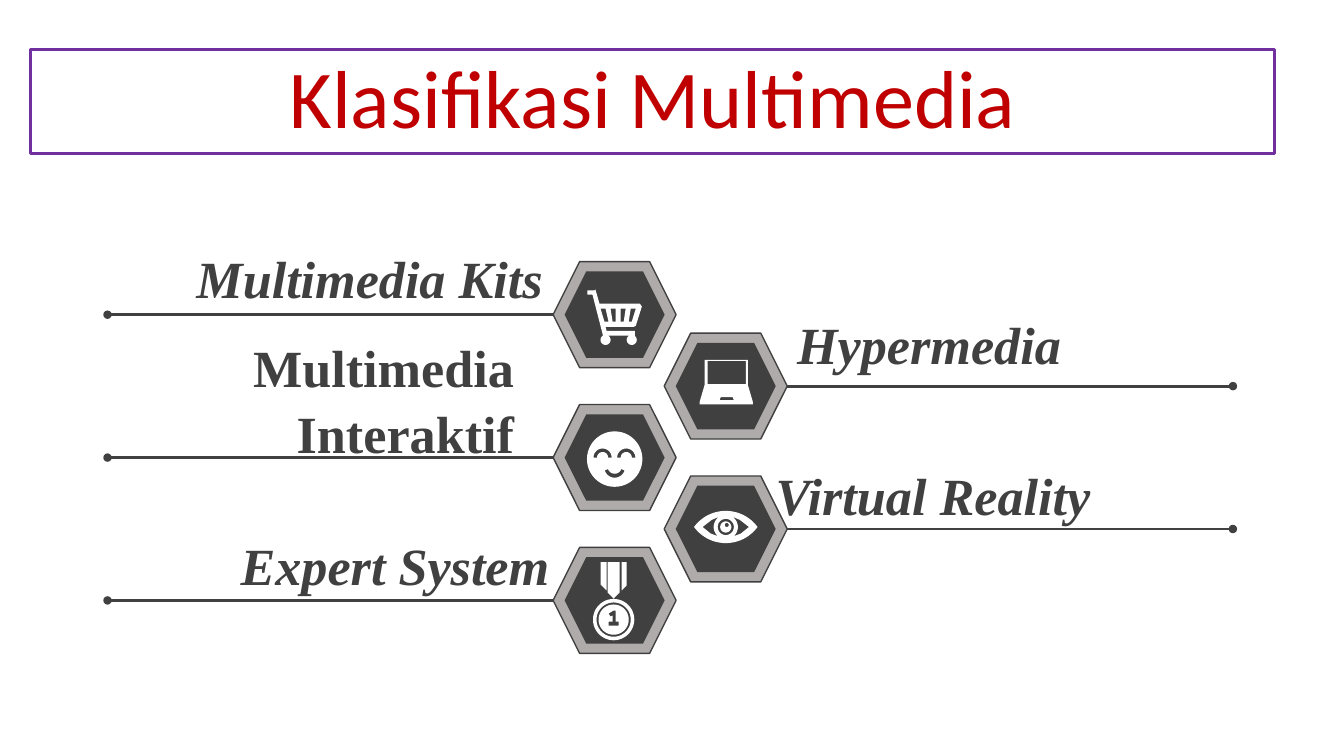
from math import cos, radians, sin

from lxml.etree import SubElement
from pptx import Presentation
from pptx.dml.color import RGBColor
from pptx.enum.shapes import MSO_CONNECTOR, MSO_SHAPE
from pptx.enum.text import MSO_ANCHOR, PP_ALIGN
from pptx.oxml.ns import qn
from pptx.util import Cm, Pt


def arc(cx, cy, rx, ry, start, end, steps=24):
    """Points along an ellipse; angles in degrees, clockwise from the right."""
    angles = [radians(start + (end - start) * i / steps) for i in range(steps + 1)]
    return [(cx + rx * cos(a), cy + ry * sin(a)) for a in angles]


def circle(cx, cy, r):
    return arc(cx, cy, r, r, 0, 360, 48)[:-1]


def mirror(points):
    return [(-x, y) for x, y in points]


def smiling_eye(cx):
    return arc(cx, 0, 9, 9, 180, 360) + arc(cx, 0, 5.5, 5.5, 360, 180)


COLORS = {"title": "C00000", "frame": "7030A0", "dark": "404040",
          "rim": "AFABAB", "icon": "FFFFFF"}
TITLE = "Klasifikasi Multimedia"

# Icon contours, measured from the centre of the hexagon in ICON_UNIT
ICON_UNIT = Cm(0.0254)
CART = [
    [(16, -6), (14, 7), (17, 7), (21, -6)],
    [(6, -6), (6, 7), (9, 7), (11, -6)],
    [(-4, -6), (-2, 7), (1, 7), (1, -6)],
    [(-14, -6), (-10, 7), (-6, 7), (-9, -6)],
    [(-19, -25), (-15, -11), (25, -11), (27, -8), (21, 11), (19, 12), (-9, 12),
     (-8, 16), (20, 16), (20, 21)] + arc(17, 25, 5, 5, -60, 240)
    + arc(-9, 25, 5, 5, -60, 240) + [(-22, -20), (-27, -20), (-27, -24), (-20, -24)],
]
LAPTOP = [
    [(-5, 11), (-6, 14), (8, 14), (7, 11)],
    [(-18, -25), (-18, -2), (20, -2), (20, -25)],
    [(-21, -26), (22, -26), (22, -1), (27, 16), (27, 18),
     (-26, 18), (-26, 16), (-21, -1)],
]
SMILE = [
    arc(0, 9, 10.5, 11, 20, 160) + arc(0, 9, 7, 7, 160, 20),
    smiling_eye(-12), smiling_eye(11.5), circle(0, 1.5, 27.5),
]
EYE_CORNER = arc(0, -2, 12, 12, -70, 50) + [(15, 4.5), (23, -2), (14, -9)]
EYE = [
    circle(1, -4, 2), circle(0, -2, 5.5), circle(0, -2, 8),
    EYE_CORNER, mirror(EYE_CORNER),
    arc(0, 21, 39, 39, -144, -36) + arc(0, -25, 39, 39, 36, 144),
]
MEDAL = [
    [(1, 10), (-1, 10), (-6, 13), (-4, 16), (-2, 15), (-2, 21),
     (-6, 21), (-6, 25), (4, 25), (4, 21), (1, 21)],
    circle(-1, 19, 15), circle(-1, 19, 17), circle(-1, 19, 20.5),
    [(7, -38), (12, -38), (12, -15), (7, -10)],
    [(-7, -38), (5, -38), (5, -8), (-1, -2), (-7, -8)],
    [(-14, -38), (-8, -38), (-8, -10), (-14, -16)],
]

# Top to bottom: label, italic, label left, label top, label height (cm), icon
ITEMS = [
    ("Multimedia Kits", True, 4.34, 5.99, 1.85, CART),
    ("Hypermedia", True, 19.84, 7.65, 1.85, LAPTOP),
    ("Multimedia Interaktif", False, 3.61, 8.23, 3.45, SMILE),
    ("Virtual Reality", True, 19.3, 11.46, 1.85, EYE),
    ("Expert System", True, 4.5, 13.23, 1.85, MEDAL),
]
# Even items sit left, odd ones right: hexagon centre, text alignment, line direction
SIDES = [(15.49, PP_ALIGN.RIGHT, -1), (18.29, PP_ALIGN.LEFT, 1)]
FIRST_Y, STEP_Y = 7.93, 1.8
LINE_LENGTH, LABEL_WIDTH = 11.23, 9.6
HEX_OUTER, HEX_INNER = (3.1, 2.67), (2.52, 2.18)

prs = Presentation()
prs.slide_width, prs.slide_height = Cm(33.87), Cm(19.05)
slide = prs.slides.add_slide(prs.slide_layouts[6])
shapes = slide.shapes


def rgb(name):
    return RGBColor.from_string(COLORS[name])


def paint(sp, fill=None, line=None, width=1):
    sp.shadow.inherit = False
    if fill:
        sp.fill.solid()
        sp.fill.fore_color.rgb = rgb(fill)
    else:
        sp.fill.background()
    if line:
        sp.line.color.rgb = rgb(line)
        sp.line.width = Pt(width)
    else:
        sp.line.fill.background()


def write(sp, text, color, font, para):
    tf = sp.text_frame
    tf.word_wrap = True
    p = tf.paragraphs[0]
    r = p.add_run()
    r.text = text
    r.font.color.rgb = rgb(color)
    for target, values in ((r.font, font), (p, para)):
        for name, value in values.items():
            setattr(target, name, value)


def add_hexagon(cx, cy, size, **look):
    w, h = size
    sp = shapes.add_shape(MSO_SHAPE.HEXAGON, Cm(cx - w / 2), Cm(cy - h / 2), Cm(w), Cm(h))
    sp.adjustments[0] = 0.25
    paint(sp, **look)


def add_dotted_line(x1, x2, y):
    """Level line that ends in a round dot at x2."""
    cn = shapes.add_connector(MSO_CONNECTOR.STRAIGHT, Cm(x1), Cm(y), Cm(x2), Cm(y))
    cn.line.color.rgb = rgb("dark")
    cn.line.width = Pt(2)
    SubElement(cn.line._get_or_add_ln(), qn("a:tailEnd"), type="oval")
    SubElement(cn._element.spPr, qn("a:effectLst"))


def add_icon(contours, cx, cy):
    builder = None
    for contour in contours:
        points = [(x * ICON_UNIT, y * ICON_UNIT) for x, y in contour]
        if builder is None:
            builder = shapes.build_freeform(*points[0])
        else:
            builder.move_to(*points[0])
        builder.add_line_segments(points[1:], close=True)
    paint(builder.convert_to_shape(Cm(cx), Cm(cy)), fill="icon")


title = shapes.add_shape(MSO_SHAPE.RECTANGLE, Cm(0.76), Cm(1.24), Cm(31.37), Cm(2.64))
paint(title, line="frame", width=2.25)
title.text_frame.vertical_anchor = MSO_ANCHOR.MIDDLE
write(title, TITLE, "title", {"name": "Calibri", "size": Pt(58.7)},
      {"alignment": PP_ALIGN.CENTER, "line_spacing": 0.9, "space_before": Pt(10)})

for i, (label, italic, left, top, height, icon) in enumerate(ITEMS):
    cx, align, direction = SIDES[i % 2]
    cy = FIRST_Y + i * STEP_Y
    add_hexagon(cx, cy, HEX_OUTER, fill="rim", line="dark")
    add_hexagon(cx, cy, HEX_INNER, fill="dark")
    edge = cx + direction * HEX_OUTER[0] / 2
    add_dotted_line(edge, edge + direction * LINE_LENGTH, cy)
    box = shapes.add_textbox(Cm(left), Cm(top), Cm(LABEL_WIDTH), Cm(height))
    write(box, label, "dark",
          {"name": "Times New Roman", "size": Pt(37.3), "bold": True, "italic": italic},
          {"alignment": align, "line_spacing": 1.06})
    add_icon(icon, cx, cy)

prs.save("out.pptx")
